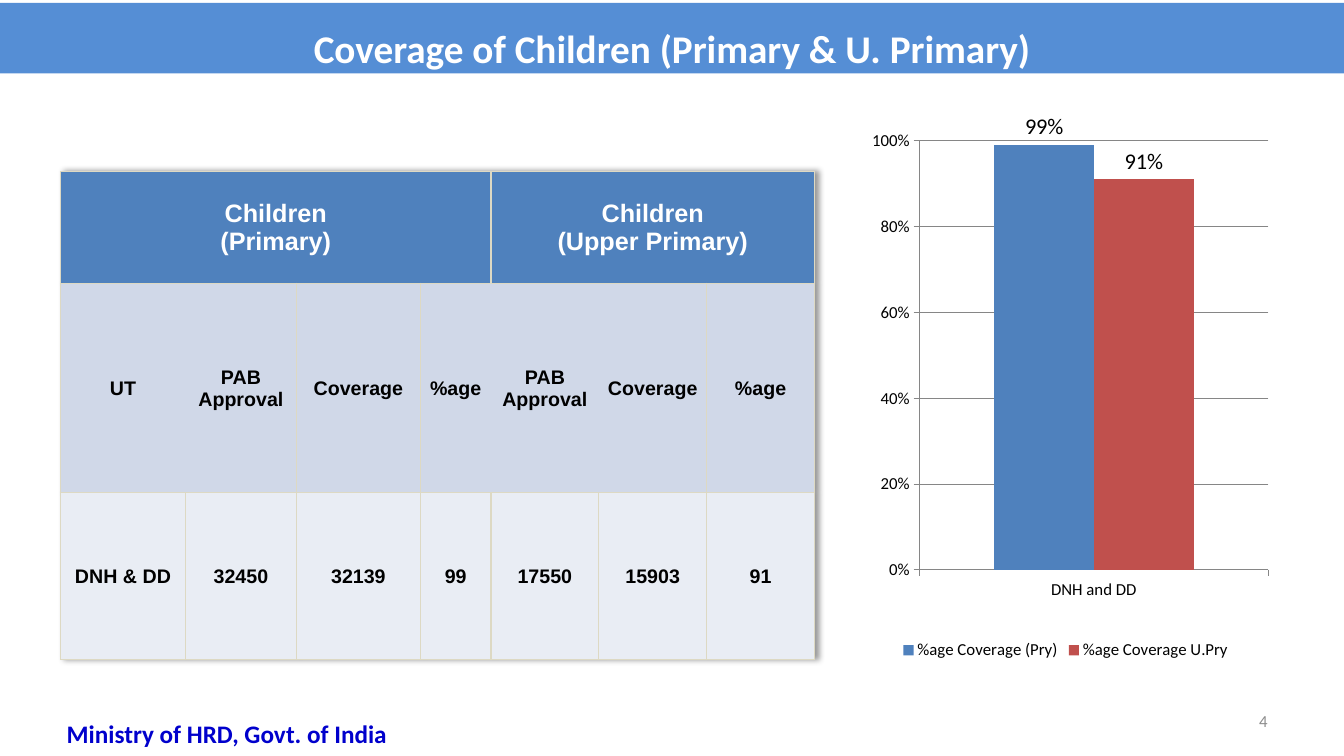
from lxml import etree
from pptx import Presentation
from pptx.chart.data import CategoryChartData
from pptx.dml.color import RGBColor
from pptx.enum import chart as ch, shapes, text
from pptx.oxml import parse_xml
from pptx.oxml.ns import nsdecls, qn
from pptx.util import Inches, Pt

# Content
TITLE = "Coverage of Children (Primary & U. Primary)"
FOOTER = "Ministry of HRD, Govt. of India"
PAGE = "4"
GROUPS = [(0, 3, "Children\n(Primary)"), (4, 6, "Children\n(Upper Primary)")]
HEADS = ["UT", "PAB Approval", "Coverage", "%age",
         "PAB Approval", "Coverage", "%age"]
FIGURES = ["DNH & DD", "32450", "32139", "99", "17550", "15903", "91"]
CATEGORY = "DNH and DD"
SERIES = [("%age Coverage (Pry)", 0.99, "blue"),
          ("%age Coverage U.Pry", 0.91, "red")]

COLS = [1.24, 1.1, 1.23, 0.7, 1.07, 1.07, 1.07]
ROWS = [1.11, 2.08, 1.65]
OPEN_EDGES = {0, 3, 4}  # heading columns with no rule on their right
PLOT = {"x": 0.166, "y": 0.084, "w": 0.797, "h": 0.751}
C = {"banner": "558ED5", "blue": "4F81BD", "red": "C0504D", "head": "D0D8E8",
     "body": "E9EDF4", "border": "DDD9C3", "white": "FFFFFF",
     "black": "000000", "grey": "8C8C8C", "axis": "868686", "navy": "0000CC"}
ALIGN = text.PP_ALIGN
MIDDLE = text.MSO_ANCHOR.MIDDLE


def rgb(name):
    return RGBColor.from_string(C[name])


def set_font(font, color, **values):
    for key, value in values.items():
        setattr(font, key, value)
    font.color.rgb = rgb(color)


def write(tf, content, align, color, **values):
    tf.text = content
    for p in tf.paragraphs:
        p.alignment = align
        for r in p.runs:
            set_font(r.font, color, **values)


def set_border(cell, sides):
    tc_pr = cell._tc.get_or_add_tcPr()
    for i, side in enumerate(("lnL", "lnR", "lnT", "lnB")):
        fill = (f'<a:solidFill><a:srgbClr val="{C["border"]}"/></a:solidFill>'
                if side in sides else "<a:noFill/>")
        tc_pr.insert(i, parse_xml(
            f'<a:{side} {nsdecls("a")} w="12700">{fill}</a:{side}>'))


prs = Presentation()
prs.slide_width, prs.slide_height = Inches(13.33), Inches(7.5)
s = prs.slides.add_slide(prs.slide_layouts[6])

# Title banner
sp = s.shapes.add_shape(shapes.MSO_SHAPE.RECTANGLE, 0, Inches(0.03),
                        Inches(13.33), Inches(0.7))
sp.shadow.inherit = False
sp.fill.solid()
sp.fill.fore_color.rgb = rgb("banner")
sp.line.fill.background()
tf = sp.text_frame
tf.word_wrap, tf.vertical_anchor = True, MIDDLE
tf.auto_size = text.MSO_AUTO_SIZE.SHAPE_TO_FIT_TEXT
write(tf, TITLE, ALIGN.CENTER, "white", name="Calibri", size=Pt(28), bold=True)
tf.paragraphs[0].line_spacing = 1.4

# Coverage chart
data = CategoryChartData(number_format="0%")
data.categories = [CATEGORY]
for name, value, _ in SERIES:
    data.add_series(name, [value])
chart = s.shapes.add_chart(ch.XL_CHART_TYPE.COLUMN_CLUSTERED, Inches(8.4),
                           Inches(0.92), Inches(4.34), Inches(5.67), data).chart
set_font(chart.font, "black", name="Calibri", size=Pt(12))
chart.has_title = False
chart.has_legend = True
chart.legend.position = ch.XL_LEGEND_POSITION.BOTTOM
chart.legend.include_in_layout = False
plot = chart.plots[0]
plot.gap_width, plot.overlap, plot.vary_by_categories = 150, 0, False
for series, (_, _, color) in zip(plot.series, SERIES):
    series.format.fill.solid()
    series.format.fill.fore_color.rgb = rgb(color)
    labels = series.data_labels
    for key, value in {"show_value": True, "number_format": "0%",
                       "number_format_is_linked": False,
                       "position": ch.XL_LABEL_POSITION.OUTSIDE_END}.items():
        setattr(labels, key, value)
    set_font(labels.font, "black", name="Calibri", size=Pt(16))

va = chart.value_axis
for key, value in {"minimum_scale": 0, "maximum_scale": 1, "major_unit": 0.2,
                   "has_major_gridlines": True}.items():
    setattr(va, key, value)
va.tick_labels.number_format = "0%"
va.tick_labels.number_format_is_linked = False
for axis in (va, chart.category_axis):
    axis.major_tick_mark = ch.XL_TICK_MARK.OUTSIDE
for part in (va, chart.category_axis, va.major_gridlines):
    part.format.line.color.rgb = rgb("axis")
    part.format.line.width = Pt(0.75)

# Fixed inner plot area
area = chart._chartSpace.chart.plotArea
for old in area.findall(qn("c:layout")):
    area.remove(old)
layout = etree.Element(qn("c:layout"))
manual = etree.SubElement(layout, qn("c:manualLayout"))
for tag, val in [("layoutTarget", "inner"), ("xMode", "edge"),
                 ("yMode", "edge"), *PLOT.items()]:
    etree.SubElement(manual, qn(f"c:{tag}")).set("val", str(val))
area.insert(0, layout)

# Coverage table
table = s.shapes.add_table(len(ROWS), len(COLS), Inches(0.6), Inches(1.7),
                           Inches(sum(COLS)), Inches(sum(ROWS))).table
for col, width in zip(table.columns, COLS):
    col.width = Inches(width)
for row, height in zip(table.rows, ROWS):
    row.height = Inches(height)
table._tbl.tblPr.insert(0, parse_xml(
    f'<a:effectLst {nsdecls("a")}><a:outerShdw blurRad="50800" dist="38100" '
    'dir="0" algn="l" rotWithShape="0"><a:srgbClr val="000000">'
    '<a:alpha val="40000"/></a:srgbClr></a:outerShdw></a:effectLst>'))

group_row = [""] * len(COLS)
for first, last, label in GROUPS:
    table.cell(0, first).merge(table.cell(0, last))
    group_row[first] = label
styles = [("blue", "white", 18), ("head", "black", 14), ("body", "black", 14)]
for i, (labels, style) in enumerate(zip([group_row, HEADS, FIGURES], styles)):
    fill, color, size = style
    for j, label in enumerate(labels):
        cell = table.cell(i, j)
        cell.fill.solid()
        cell.fill.fore_color.rgb = rgb(fill)
        cell.vertical_anchor = MIDDLE
        cell.margin_left = cell.margin_right = cell.margin_top = Inches(0.01)
        cell.margin_bottom = 0
        sides = {"lnL", "lnR", "lnT", "lnB"}
        if i == 1:
            sides -= {"lnR"} if j in OPEN_EDGES else set()
            sides -= {"lnL"} if j - 1 in OPEN_EDGES else set()
        set_border(cell, sides)
        if label:
            write(cell.text_frame, label, ALIGN.CENTER, color,
                  name="Arial", size=Pt(size), bold=True)

# Page number and footer
NOTES = [
    (PAGE, (9.56, 6.95, 3.11, 0.4), ALIGN.RIGHT, MIDDLE, "grey", 12, False),
    (FOOTER, (0.29, 7.08, 3.92, 0.4), ALIGN.CENTER, text.MSO_ANCHOR.TOP,
     "navy", 18, True),
]
for content, box, align, anchor, color, size, bold in NOTES:
    tf = s.shapes.add_textbox(*map(Inches, box)).text_frame
    tf.word_wrap, tf.vertical_anchor = True, anchor
    write(tf, content, align, color, name="Calibri", size=Pt(size), bold=bold)

prs.save("out.pptx")
